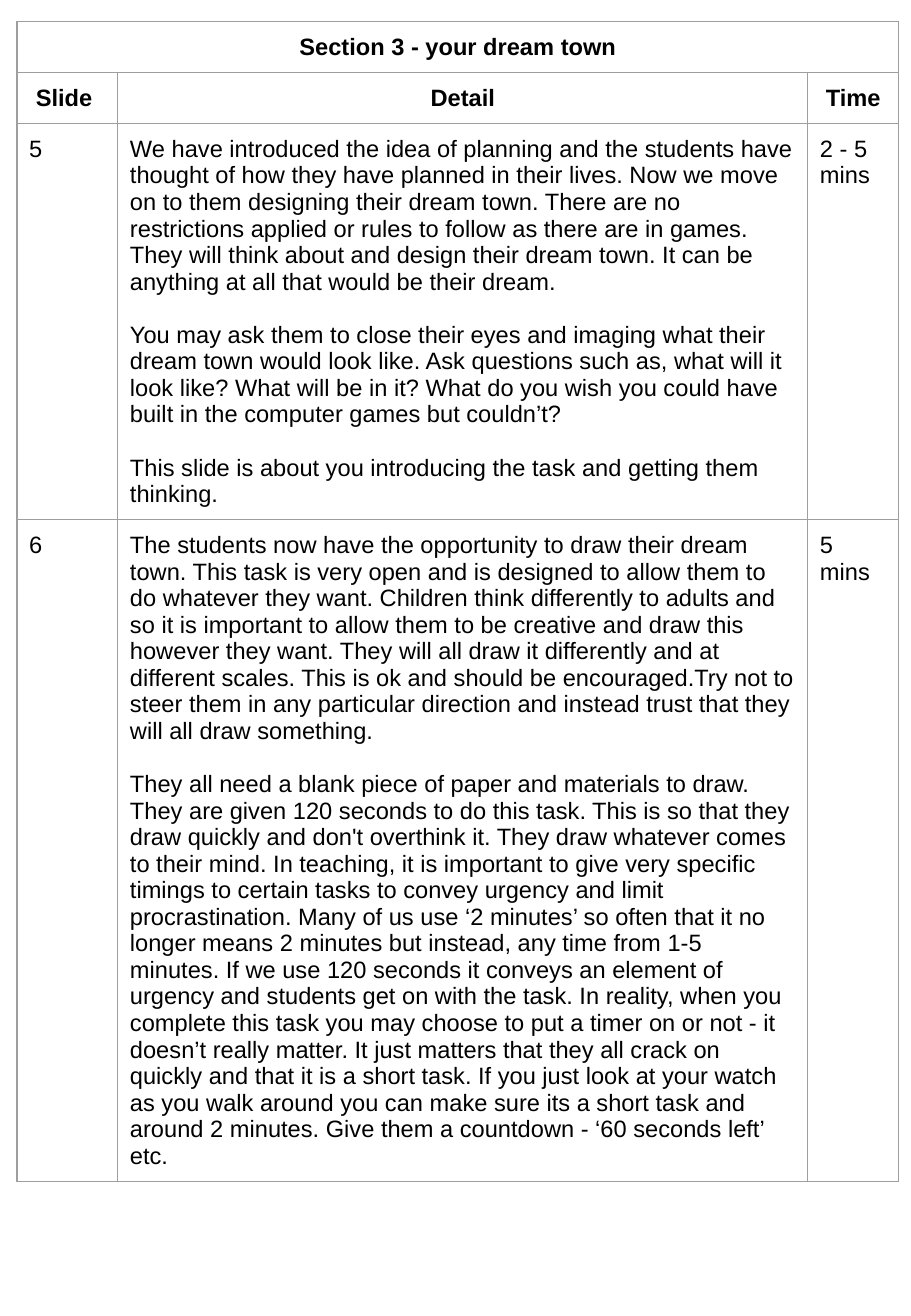
from lxml.etree import SubElement
from pptx import Presentation
from pptx.dml.color import RGBColor
from pptx.enum.text import PP_ALIGN
from pptx.oxml.ns import qn
from pptx.util import Inches, Pt

BLACK = RGBColor(0x00, 0x00, 0x00)
GREY = RGBColor(0x9E, 0x9E, 0x9E)
COLS = [0.83, 5.68, 0.75]
ROWS = [0.41, 0.42, 3.26, 5.44]
PAD = Inches(0.1)
GAP = Pt(15.75)

TITLE = "Section 3 - your dream town"
HEADS = ["Slide ", "Detail", "Time"]
TIMING = [
    "They all need a blank piece of paper and materials to draw. They are "
    "given 120 seconds to do this task. This is so that they draw quickly "
    "and don't overthink it. They draw whatever comes to their mind. In "
    "teaching, it is important to give very specific timings to certain "
    "tasks to convey urgency and limit procrastination.",
    "Many of us use ‘2 minutes’ so often that it no longer means 2 minutes "
    "but instead, any time from 1-5 minutes. If we use 120 seconds it "
    "conveys an element of urgency and students get on with the task.",
    "In reality, when you complete this task you may choose to put a timer "
    "on or not - it doesn’t really matter. It just matters that they all "
    "crack on quickly and that it is a short task. If you just look at your "
    "watch as you walk around you can make sure its a short task and around "
    "2 minutes. Give them a countdown - ‘60 seconds left’ etc.",
]
STEPS = [
    ("5", [
        "We have introduced the idea of planning and the students have thought "
        "of how they have planned in their lives. Now we move on to them "
        "designing their dream town. There are no restrictions applied or rules "
        "to follow as there are in games. They will think about and design their "
        "dream town. It can be anything at all that would be their dream.",
        "You may ask them to close their eyes and imaging what their dream town "
        "would look like. Ask questions such as, what will it look like? What "
        "will be in it? What do you wish you could have built in the computer "
        "games but couldn’t?",
        "This slide is about you introducing the task and getting them thinking.",
    ], "2 - 5 mins"),
    ("6", [
        "The students now have the opportunity to draw their dream town. This "
        "task is very open and is designed to allow them to do whatever they "
        "want. Children think differently to adults and so it is important to "
        "allow them to be creative and draw this however they want. They will "
        "all draw it differently and at different scales. This is ok and should "
        "be encouraged.Try not to steer them in any particular direction and "
        "instead trust that they will all draw something.",
        " ".join(TIMING),
    ], "5 mins"),
]


def write(frame, parts, size=14, bold=False, align=PP_ALIGN.LEFT):
    """Fill a text frame with one paragraph for each part."""
    for i, part in enumerate(parts):
        para = frame.add_paragraph() if i else frame.paragraphs[0]
        para.alignment = align
        para.space_before = GAP if i else Pt(0)
        run = para.add_run()
        run.text = part
        font = run.font
        font.name, font.size, font.bold = "Arial", Pt(size), bold
        font.color.rgb = BLACK


def style(cell):
    """Give a cell its padding, thin grey borders and no fill."""
    cell.margin_left = cell.margin_right = PAD
    cell.margin_top = cell.margin_bottom = PAD
    props = cell._tc.get_or_add_tcPr()
    for side in "LRTB":
        line = SubElement(props, qn(f"a:ln{side}"), w=str(Pt(0.75)))
        fill = SubElement(line, qn("a:solidFill"))
        SubElement(fill, qn("a:srgbClr"), val=str(GREY))
    cell.fill.background()


def add_grid(slide):
    """Add the empty table and set its columns and rows."""
    table = slide.shapes.add_table(
        len(ROWS), len(COLS), Inches(0.14), Inches(0.18),
        Inches(sum(COLS)), Inches(sum(ROWS))).table
    table.first_row = table.horz_banding = False
    for col, width in zip(table.columns, COLS):
        col.width = Inches(width)
    for row, height in zip(table.rows, ROWS):
        row.height = Inches(height)
    for cell in table.iter_cells():
        style(cell)
    return table


def main():
    deck = Presentation()
    deck.slide_width, deck.slide_height = Inches(7.5), Inches(10.83)
    slide = deck.slides.add_slide(deck.slide_layouts[6])
    table = add_grid(slide)

    # Section title across all columns
    table.cell(0, 0).merge(table.cell(0, len(COLS) - 1))
    write(table.cell(0, 0).text_frame, [TITLE], bold=True, align=PP_ALIGN.CENTER)

    # Column heads
    for c, head in enumerate(HEADS):
        write(table.cell(1, c).text_frame, [head], bold=True,
              align=PP_ALIGN.CENTER)

    # Lesson steps
    for r, (number, detail, time) in enumerate(STEPS, 2):
        for c, parts in enumerate([[number], detail, [time]]):
            write(table.cell(r, c).text_frame, parts)

    deck.save("out.pptx")


if __name__ == "__main__":
    main()
